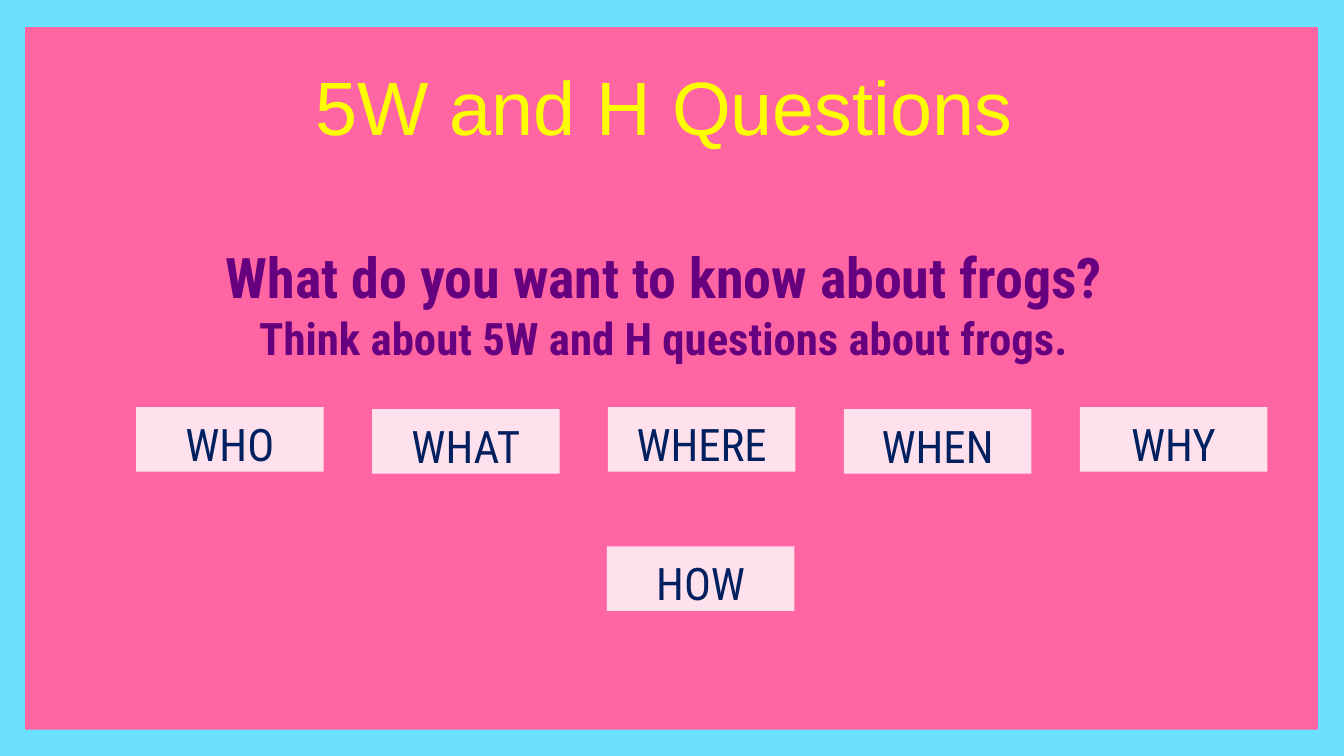
from pptx import Presentation
from pptx import util as u
from pptx.dml.color import RGBColor
from pptx.enum import shapes, text

SKY = RGBColor(0x6C, 0xE0, 0xFF)
PINK = RGBColor(0xFF, 0x65, 0xA3)
PALE_PINK = RGBColor(0xFF, 0xE0, 0xED)
YELLOW = RGBColor(0xFF, 0xFF, 0x00)
PURPLE = RGBColor(0x66, 0x00, 0x7F)
NAVY = RGBColor(0x00, 0x20, 0x60)
CONDENSED = "Roboto Condensed"

deck = Presentation()
deck.slide_width = u.Inches(13.33)
deck.slide_height = u.Inches(7.5)
page = deck.slides.add_slide(deck.slide_layouts[6])
page.background.fill.solid()
page.background.fill.fore_color.rgb = SKY


def add_panel(left, top, width, height, color):
    panel = page.shapes.add_shape(
        shapes.MSO_SHAPE.RECTANGLE,
        u.Inches(left), u.Inches(top), u.Inches(width), u.Inches(height))
    panel.shadow.inherit = False
    panel.fill.solid()
    panel.fill.fore_color.rgb = color
    panel.line.fill.background()
    return panel


def write_centred(para, words, font_name, size, color, bold=False):
    para.text = words
    para.alignment = text.PP_ALIGN.CENTER
    for span in para.runs:
        span.font.name = font_name
        span.font.size = u.Pt(size)
        span.font.color.rgb = color
        span.font.bold = bold


add_panel(0.25, 0.27, 12.82, 6.97, PINK)

box = page.shapes.add_textbox(
    u.Inches(0.54), u.Inches(0.47), u.Inches(12.09), u.Inches(4.41))
frame = box.text_frame
frame.word_wrap = True
frame.margin_top = u.Inches(0.12)

title = frame.paragraphs[0]
write_centred(title, "5W and H Questions", "Arial", 54, YELLOW)

question = frame.add_paragraph()
question.space_before = u.Pt(66)
write_centred(question, "What do you want to know about frogs?",
              CONDENSED, 40, PURPLE, True)

hint = frame.add_paragraph()
hint.space_before = u.Pt(1)
hint._p.get_or_add_pPr().set("indent", str(u.Inches(-0.22)))
write_centred(hint, "Think about 5W and H questions about frogs.",
              CONDENSED, 32, PURPLE, True)

word_cards = [(word, 1.35 + 2.34 * column, 4.04 + 0.02 * (column % 2))
              for column, word in enumerate(["WHO", "WHAT", "WHERE", "WHEN", "WHY"])]
word_cards.append(("HOW", 6.02, 5.42))

for word, left, top in word_cards:
    card = add_panel(left, top, 1.86, 0.64, PALE_PINK)
    frame = card.text_frame
    frame.vertical_anchor = text.MSO_ANCHOR.TOP
    frame.margin_top = u.Inches(0.09)
    frame.margin_bottom = 0
    write_centred(frame.paragraphs[0], word, CONDENSED, 32, NAVY)

deck.save("out.pptx")
